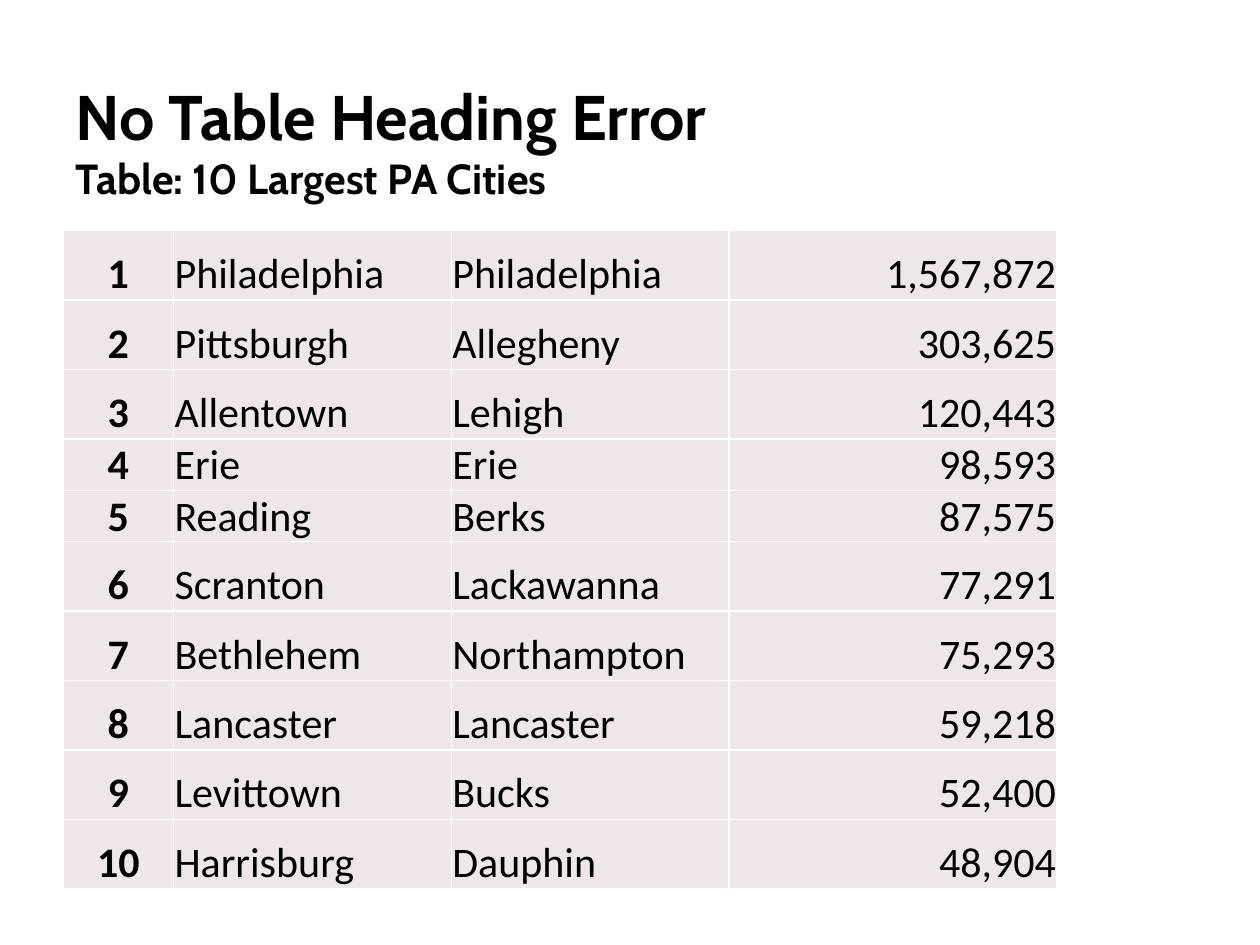
from dataclasses import dataclass

from lxml import etree
from pptx import Presentation
from pptx import util as u
from pptx.dml.color import RGBColor
from pptx.enum import text
from pptx.oxml import ns


@dataclass(frozen=True)
class Theme:
    ink: str = "000000"
    cell: str = "EFE7E7"
    border: str = "FFFFFF"
    border_width: float = 1
    heading_font: str = "Cabin"
    body_font: str = "Calibri"
    title_size: int = 36
    subtitle_size: int = 24
    body_size: int = 24


THEME = Theme()
LEFT, WIDTH = u.Cm(1.27), u.Cm(20.04)
COLUMN_WIDTHS = [2.23, 5.6, 5.6, 6.61]
TALL_ROW, SHORT_ROW = 1.4, 0.74
SHORT_RANKS = (4, 5)

CITIES = [
    ("Philadelphia", "Philadelphia", 1567872),
    ("Pittsburgh", "Allegheny", 303625),
    ("Allentown", "Lehigh", 120443),
    ("Erie", "Erie", 98593),
    ("Reading", "Berks", 87575),
    ("Scranton", "Lackawanna", 77291),
    ("Bethlehem", "Northampton", 75293),
    ("Lancaster", "Lancaster", 59218),
    ("Levittown", "Bucks", 52400),
    ("Harrisburg", "Dauphin", 48904),
]


def add_run(p, content, font, size, bold=False):
    r = p.add_run()
    r.text = content
    r.font.name = font
    r.font.size = u.Pt(size)
    r.font.bold = bold
    r.font.color.rgb = RGBColor.from_string(THEME.ink)


def add_title(s, title, subtitle):
    sp = s.shapes.add_textbox(LEFT, u.Cm(1.04), WIDTH, u.Cm(3.18))
    tf = sp.text_frame
    tf.word_wrap = True
    tf.vertical_anchor = text.MSO_ANCHOR.BOTTOM
    p = tf.paragraphs[0]
    add_run(p, title, THEME.heading_font, THEME.title_size, bold=True)
    p.add_line_break()
    add_run(p, subtitle, THEME.heading_font, THEME.subtitle_size, bold=True)


def set_borders(cell):
    """Draw all four cell sides; they must precede the fill in tcPr."""
    tc_pr = cell._tc.get_or_add_tcPr()
    for i, side in enumerate(("lnL", "lnR", "lnT", "lnB")):
        ln = etree.Element(ns.qn(f"a:{side}"), w=str(u.Pt(THEME.border_width)))
        fill = etree.SubElement(ln, ns.qn("a:solidFill"))
        etree.SubElement(fill, ns.qn("a:srgbClr"), val=THEME.border)
        tc_pr.insert(i, ln)


def fill_cell(cell, content, align, bold):
    cell.margin_left = cell.margin_right = cell.margin_top = u.Cm(0.02)
    cell.margin_bottom = 0
    cell.vertical_anchor = text.MSO_ANCHOR.BOTTOM
    cell.fill.solid()
    cell.fill.fore_color.rgb = RGBColor.from_string(THEME.cell)
    set_borders(cell)
    p = cell.text_frame.paragraphs[0]
    p.alignment = align
    add_run(p, content, THEME.body_font, THEME.body_size, bold)


def add_city_table(s):
    heights = [SHORT_ROW if rank in SHORT_RANKS else TALL_ROW
               for rank in range(1, len(CITIES) + 1)]
    frame = s.shapes.add_table(len(CITIES), len(COLUMN_WIDTHS),
                               LEFT, u.Cm(4.65), WIDTH, u.Cm(sum(heights)))
    table = frame.table
    table.first_row = table.horz_banding = False
    for column, width in zip(table.columns, COLUMN_WIDTHS):
        column.width = u.Cm(width)
    for row, height in zip(table.rows, heights):
        row.height = u.Cm(height)

    al = text.PP_ALIGN
    aligns = (al.CENTER, al.LEFT, al.LEFT, al.RIGHT)
    for i, (city, county, population) in enumerate(CITIES):
        values = (str(i + 1), city, county, f"{population:,}")
        for j, (value, align) in enumerate(zip(values, aligns)):
            fill_cell(table.cell(i, j), value, align, bold=j == 0)


def main():
    prs = Presentation()
    prs.slide_width, prs.slide_height = u.Cm(25.4), u.Cm(19.05)
    s = prs.slides.add_slide(prs.slide_layouts[6])
    add_title(s, "No Table Heading Error", "Table: 10 Largest PA Cities")
    add_city_table(s)
    prs.save("out.pptx")


if __name__ == "__main__":
    main()
